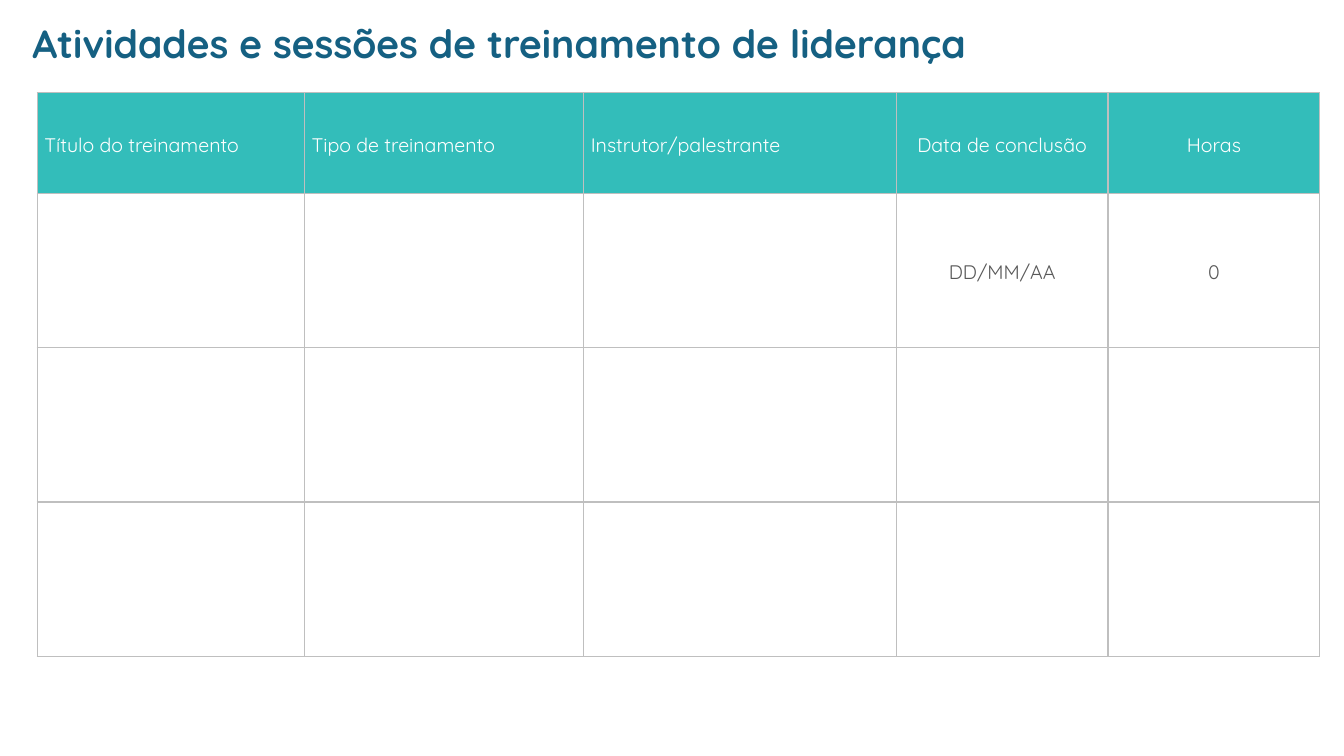
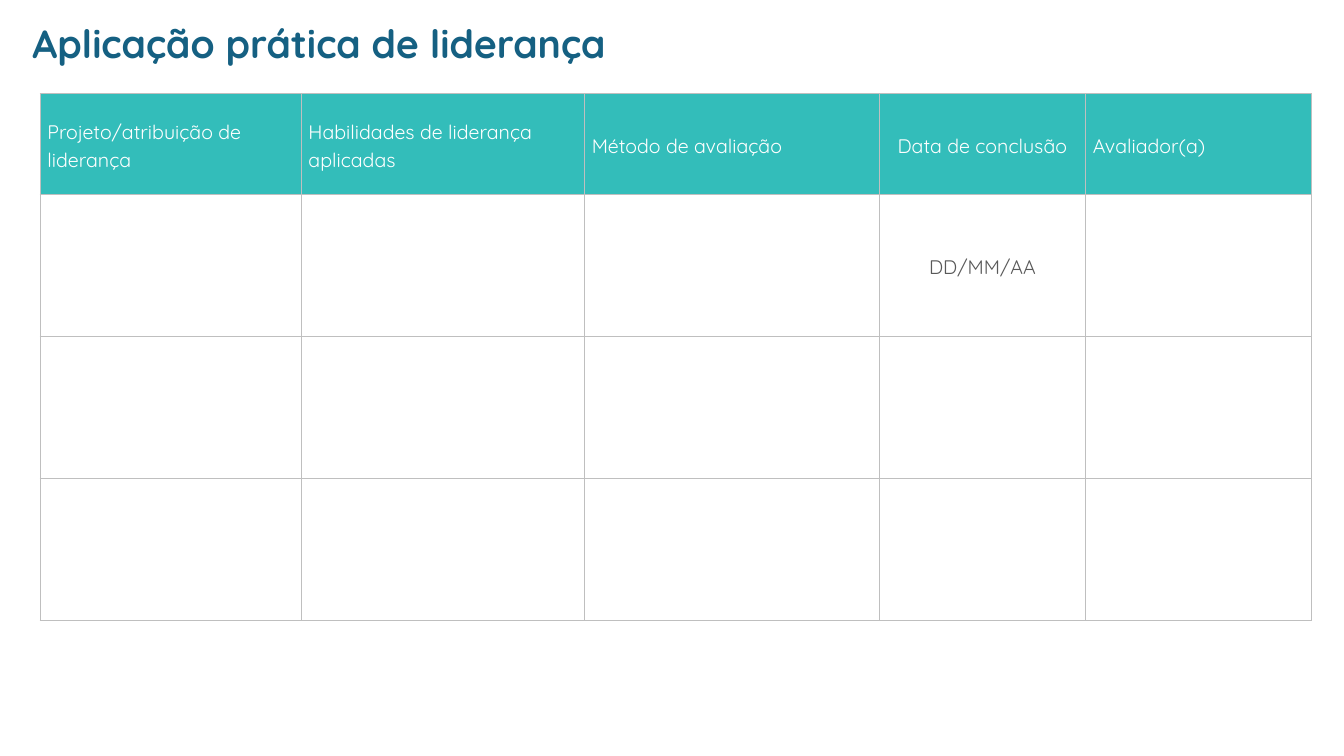
from lxml.etree import SubElement
from pptx import Presentation
from pptx.dml.color import RGBColor
from pptx.enum.text import MSO_ANCHOR as Anchor, MSO_AUTO_SIZE as Fit, PP_ALIGN as Align
from pptx.oxml.ns import qn
from pptx.util import Inches, Pt


def color(code):
    return RGBColor.from_string(code)


class Deck:
    # Shared style
    font = "Quicksand"
    navy, teal, gray, rule, white = "156082", "33BDBA", "595959", "BFBFBF", "FFFFFF"

    def __init__(self):
        self.prs = Presentation()
        self.prs.slide_width, self.prs.slide_height = Inches(13.33), Inches(7.5)
        self.slide = None

    def style(self, para, size, code, bold=False, align=Align.LEFT):
        para.alignment = align
        for run in para.runs:
            run.font.name, run.font.size, run.font.bold = self.font, Pt(size), bold
            run.font.color.rgb = color(code)

    def page(self, title):
        """Start a slide with its title."""
        self.slide = self.prs.slides.add_slide(self.prs.slide_layouts[5])
        box = self.slide.shapes.title
        box.left, box.top = Inches(0.22), Inches(0.14)
        box.width, box.height = Inches(11.34), Inches(0.57)
        frame = box.text_frame
        frame.text = title
        frame.auto_size, frame.vertical_anchor = Fit.NONE, Anchor.TOP
        self.style(frame.paragraphs[0], 28, self.navy, bold=True)

    def border(self, cell):
        """Draw a thin line on all four sides of a cell."""
        props = cell._tc.get_or_add_tcPr()
        for spot, side in enumerate(("lnL", "lnR", "lnT", "lnB")):
            line = SubElement(props, qn(f"a:{side}"), w=str(Pt(1)))
            fill = SubElement(line, qn("a:solidFill"))
            SubElement(fill, qn("a:srgbClr"), val=self.rule)
            props.insert(spot, line)

    def cell(self, cell, text, head, align):
        cell.vertical_anchor = Anchor.MIDDLE
        cell.margin_left = cell.margin_right = Inches(0.07)
        cell.margin_top = cell.margin_bottom = 0
        if head:
            cell.fill.solid()
            cell.fill.fore_color.rgb = color(self.teal)
        else:
            cell.fill.background()
        self.border(cell)
        if text:
            cell.text_frame.text = text
            para = cell.text_frame.paragraphs[0]
            para.line_spacing, para.space_after = 1.15, Pt(8)
            self.style(para, 14, self.white if head else self.gray, align=align)

    def table(self, left, top, widths, tall, rows, mid):
        """Add a table: one header row, then rows of equal height.

        The columns listed in mid are centred.
        """
        highs = [1] + [tall] * (len(rows) - 1)
        grid = self.slide.shapes.add_table(
            len(rows), len(widths), Inches(left), Inches(top),
            Inches(sum(widths)), Inches(sum(highs))).table
        grid.first_row = grid.horz_banding = False
        for col, width in zip(grid.columns, widths):
            col.width = Inches(width)
        for r, (row, high) in enumerate(zip(rows, highs)):
            grid.rows[r].height = Inches(high)
            for c, text in enumerate(row):
                align = Align.CENTER if c in mid else Align.LEFT
                self.cell(grid.cell(r, c), text, r == 0, align)


def main():
    deck = Deck()
    blank = [""] * 5

    # Training sessions
    deck.page("Atividades e sessões de treinamento de liderança")
    deck.table(0.37, 0.92, [2.65, 2.77, 3.1, 2.1, 2.1], 1.53, [
        ["Título do treinamento", "Tipo de treinamento", "Instrutor/palestrante",
         "Data de conclusão", "Horas"],
        ["", "", "", "DD/MM/AA", "0"],
        blank, blank,
    ], mid=(3, 4))

    # Practical application
    deck.page("Aplicação prática de liderança")
    deck.table(0.4, 0.93, [2.59, 2.81, 2.92, 2.05, 2.24], 1.41, [
        ["Projeto/atribuição de liderança", "Habilidades de liderança aplicadas",
         "Método de avaliação", "Data de conclusão", "Avaliador(a)"],
        ["", "", "", "DD/MM/AA", ""],
        blank, blank,
    ], mid=(3,))

    deck.prs.save("out.pptx")


if __name__ == "__main__":
    main()
